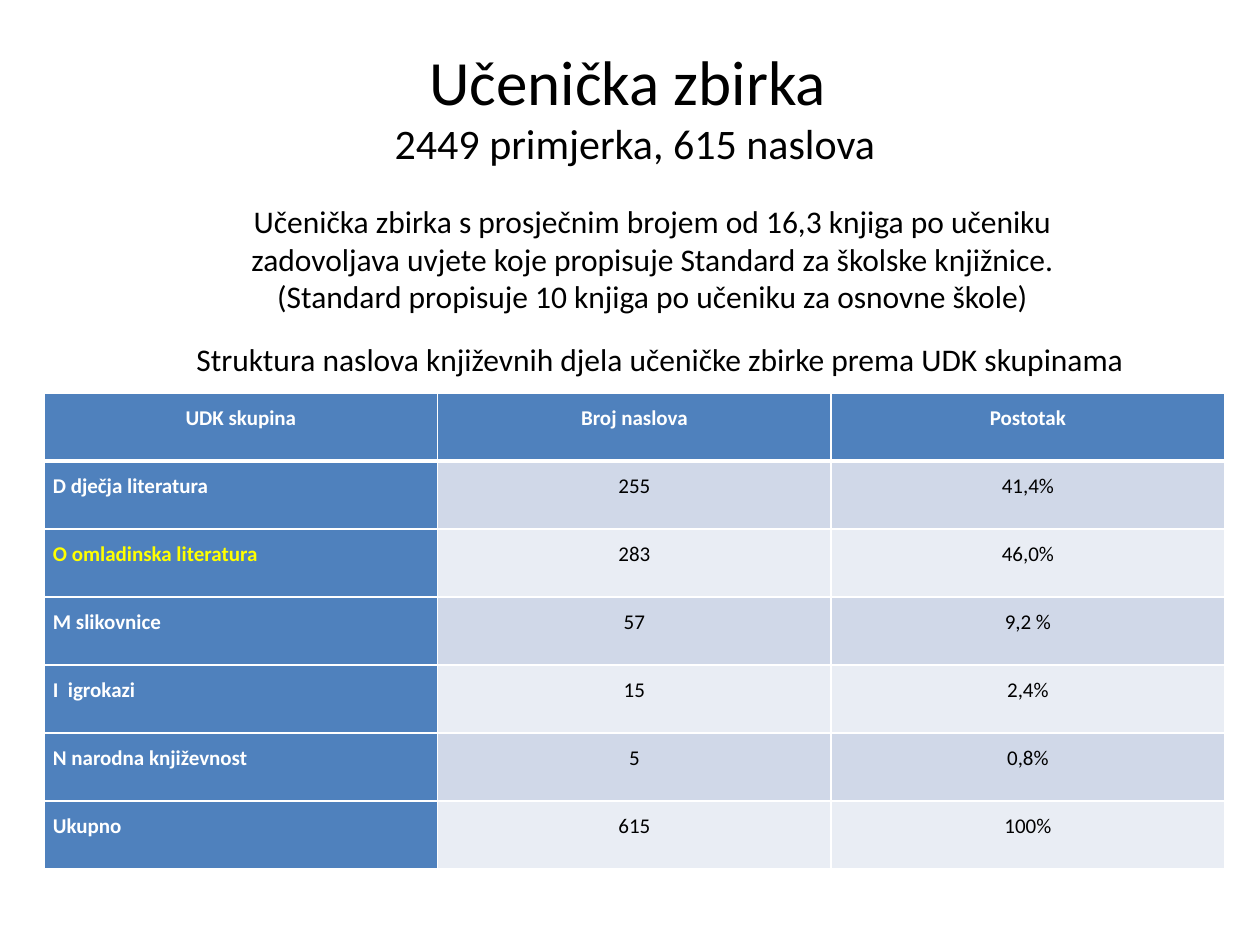
from dataclasses import dataclass

from lxml import etree
from pptx import Presentation
from pptx import util as u
from pptx.dml.color import RGBColor
from pptx.enum import text
from pptx.oxml import ns

TITLE = ("Učenička zbirka ", "2449 primjerka, 615 naslova")
SUMMARY = ("Učenička zbirka s prosječnim brojem od 16,3 knjiga po učeniku "
           "zadovoljava uvjete koje propisuje Standard za školske knjižnice. "
           "(Standard propisuje 10 knjiga po učeniku za osnovne škole)")
CAPTION = "Struktura naslova književnih djela učeničke zbirke prema UDK skupinama"
GROUPS = [
    ("UDK skupina", "Broj naslova", "Postotak"),
    ("D dječja literatura", "255", "41,4%"),
    ("O omladinska literatura", "283", "46,0%"),
    ("M slikovnice ", "57", "9,2 %"),
    ("I  igrokazi ", "15", "2,4%"),
    ("N narodna književnost", "5", "0,8%"),
    ("Ukupno", "615", "100%"),
]
HIGHLIGHTED_ROW = 2


@dataclass(frozen=True)
class Theme:
    font: str = "Calibri"
    ink: str = "000000"
    white: str = "FFFFFF"
    highlight: str = "FFFF00"
    accent: str = "4F81BD"
    bands: tuple = ("E9EDF4", "D0D8E8")
    title_sizes: tuple = (36, 24)
    body_size: int = 18
    cell_size: int = 12
    rule: int = 1
    header_rule: int = 3


THEME = Theme()
ALIGN = text.PP_ALIGN
WIDTH, HEIGHT = u.Inches(10), u.Inches(7.5)


def place(left, top, width, height):
    return [round(share * side) for share, side in
            zip((left, top, width, height), (WIDTH, HEIGHT) * 2)]


def add_span(para, words, size, color=THEME.ink, bold=False):
    span = para.add_run()
    span.text = words
    span.font.name = THEME.font
    span.font.size = u.Pt(size)
    span.font.bold = bold
    span.font.color.rgb = RGBColor.from_string(color)


def add_text(page, area, lines, sizes, align):
    box = page.shapes.add_textbox(*place(*area))
    box.text_frame.word_wrap = True
    para = box.text_frame.paragraphs[0]
    para.alignment = align
    for index, (line, size) in enumerate(zip(lines, sizes)):
        if index:
            para.add_line_break()
        add_span(para, line, size)
    return box


def set_borders(cell, widths):
    properties = cell._tc.get_or_add_tcPr()
    for index, (side, width) in enumerate(widths.items()):
        line = etree.Element(ns.qn(f"a:ln{side}"), w=str(u.Pt(width)))
        fill = etree.SubElement(line, ns.qn("a:solidFill"))
        etree.SubElement(fill, ns.qn("a:srgbClr"), val=THEME.white)
        properties.insert(index, line)


def fill_cell(cell, words, row, column):
    labelled = row == 0 or column == 0
    color = THEME.white if labelled else THEME.ink
    if labelled and row == HIGHLIGHTED_ROW:
        color = THEME.highlight
    cell.margin_left = cell.margin_right = u.Inches(0.07)
    cell.margin_top = cell.margin_bottom = 0
    cell.fill.solid()
    cell.fill.fore_color.rgb = RGBColor.from_string(
        THEME.accent if labelled else THEME.bands[row % 2])
    para = cell.text_frame.paragraphs[0]
    para.alignment = ALIGN.JUSTIFY if row and column == 0 else ALIGN.CENTER
    para.line_spacing = 1.5
    add_span(para, words, THEME.cell_size, color, labelled)
    widths = dict.fromkeys("LRTB", THEME.rule)
    if row < 2:
        widths["T" if row else "B"] = THEME.header_rule
    set_borders(cell, widths)


def add_groups(page, area):
    frame = page.shapes.add_table(len(GROUPS), len(GROUPS[0]), *place(*area))
    for row, values in enumerate(GROUPS):
        for column, words in enumerate(values):
            fill_cell(frame.table.cell(row, column), words, row, column)


def main():
    deck = Presentation()
    deck.slide_width, deck.slide_height = WIDTH, HEIGHT
    page = deck.slides.add_slide(deck.slide_layouts[6])
    add_groups(page, (0.035, 0.416, 0.937, 0.504))
    title = add_text(page, (0.059, 0.042, 0.89, 0.139), TITLE,
                     THEME.title_sizes, ALIGN.CENTER)
    title.text_frame.vertical_anchor = text.MSO_ANCHOR.MIDDLE
    add_text(page, (0.146, 0.353, 0.772, 0.053), [CAPTION],
             [THEME.body_size], ALIGN.LEFT)
    add_text(page, (0.146, 0.207, 0.744, 0.135), [SUMMARY],
             [THEME.body_size], ALIGN.CENTER)
    deck.save("out.pptx")


if __name__ == "__main__":
    main()
